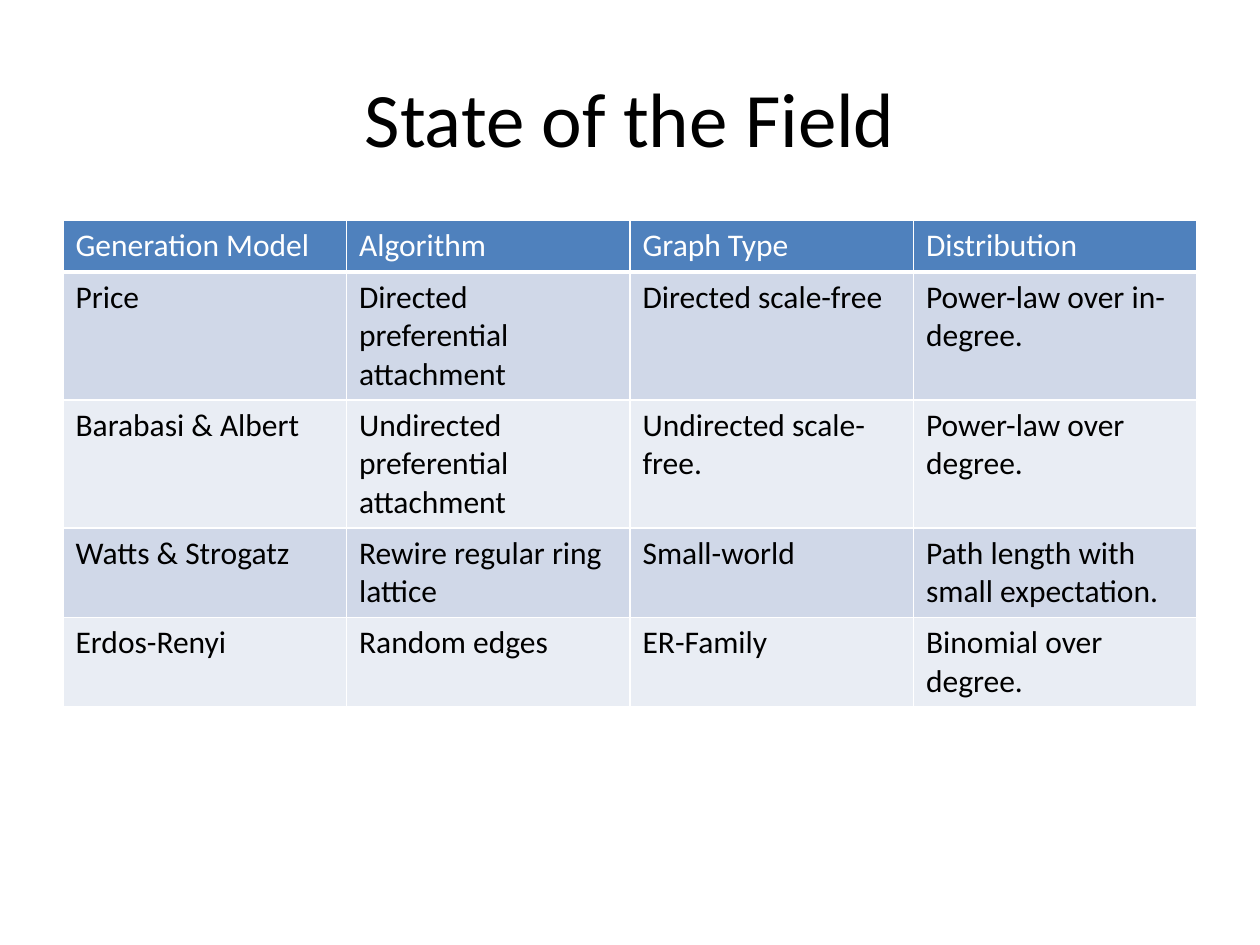
import pptx
import pptx.dml.color
import pptx.enum.text
import pptx.oxml
import pptx.oxml.ns
import pptx.util
from pptx.util import Inches

RGBColor = pptx.dml.color.RGBColor
BLACK = RGBColor(0x00, 0x00, 0x00)
WHITE = RGBColor(0xFF, 0xFF, 0xFF)
HEADER_BLUE = RGBColor(0x4F, 0x81, 0xBD)
BAND_DARK = RGBColor(0xD0, 0xD8, 0xE8)
BAND_LIGHT = RGBColor(0xE9, 0xED, 0xF4)
FONT = "Calibri"

MODELS = [
    ("Generation Model", "Algorithm", "Graph Type", "Distribution"),
    ("Price", "Directed preferential attachment", "Directed scale-free",
     "Power-law over in-degree."),
    ("Barabasi & Albert", "Undirected preferential attachment",
     "Undirected scale-free.", "Power-law over degree."),
    ("Watts & Strogatz", "Rewire regular ring lattice", "Small-world",
     "Path length with small expectation."),
    ("Erdos-Renyi", "Random edges", "ER-Family", "Binomial over degree."),
]


def set_text(text_frame, text, size, color):
    text_frame.text = text
    font = text_frame.paragraphs[0].runs[0].font
    font.name = FONT
    font.size = pptx.util.Pt(size)
    font.bold = False
    font.color.rgb = color


def add_title(slide, text):
    title = slide.shapes.title
    title.left, title.top = Inches(0.5), Inches(0.3)
    title.width, title.height = Inches(9), Inches(1.25)
    set_text(title.text_frame, text, 44, BLACK)
    title.text_frame.vertical_anchor = pptx.enum.text.MSO_ANCHOR.MIDDLE
    title.text_frame.paragraphs[0].alignment = pptx.enum.text.PP_ALIGN.CENTER


def set_borders(cell, widths):
    """Draw white borders; widths maps L, R, T and B to points.

    Call before filling the cell, as the schema puts lines ahead of the fill.
    """
    properties = cell._tc.get_or_add_tcPr()
    for side, width in widths.items():
        properties.append(pptx.oxml.parse_xml(
            f'<a:ln{side} {pptx.oxml.ns.nsdecls("a")} w="{pptx.util.Pt(width)}">'
            f'<a:solidFill><a:srgbClr val="{WHITE}"/></a:solidFill></a:ln{side}>'))


def add_table(slide, rows):
    table = slide.shapes.add_table(
        len(rows), len(rows[0]), Inches(0.5), Inches(1.75),
        Inches(9), Inches(0.41 * len(rows))).table
    for r, row in enumerate(rows):
        is_header = r == 0
        if is_header:
            fill, color = HEADER_BLUE, WHITE
        else:
            fill, color = (BAND_DARK if r % 2 else BAND_LIGHT), BLACK
        widths = {"L": 1, "R": 1, "T": 3 if r == 1 else 1, "B": 3 if is_header else 1}
        for c, text in enumerate(row):
            cell = table.cell(r, c)
            set_text(cell.text_frame, text, 18, color)
            set_borders(cell, widths)
            cell.fill.solid()
            cell.fill.fore_color.rgb = fill


def main():
    presentation = pptx.Presentation()
    presentation.slide_width = Inches(10)
    presentation.slide_height = Inches(7.5)
    slide = presentation.slides.add_slide(presentation.slide_layouts[5])
    add_title(slide, "State of the Field")
    add_table(slide, MODELS)
    presentation.save("out.pptx")


if __name__ == "__main__":
    main()
